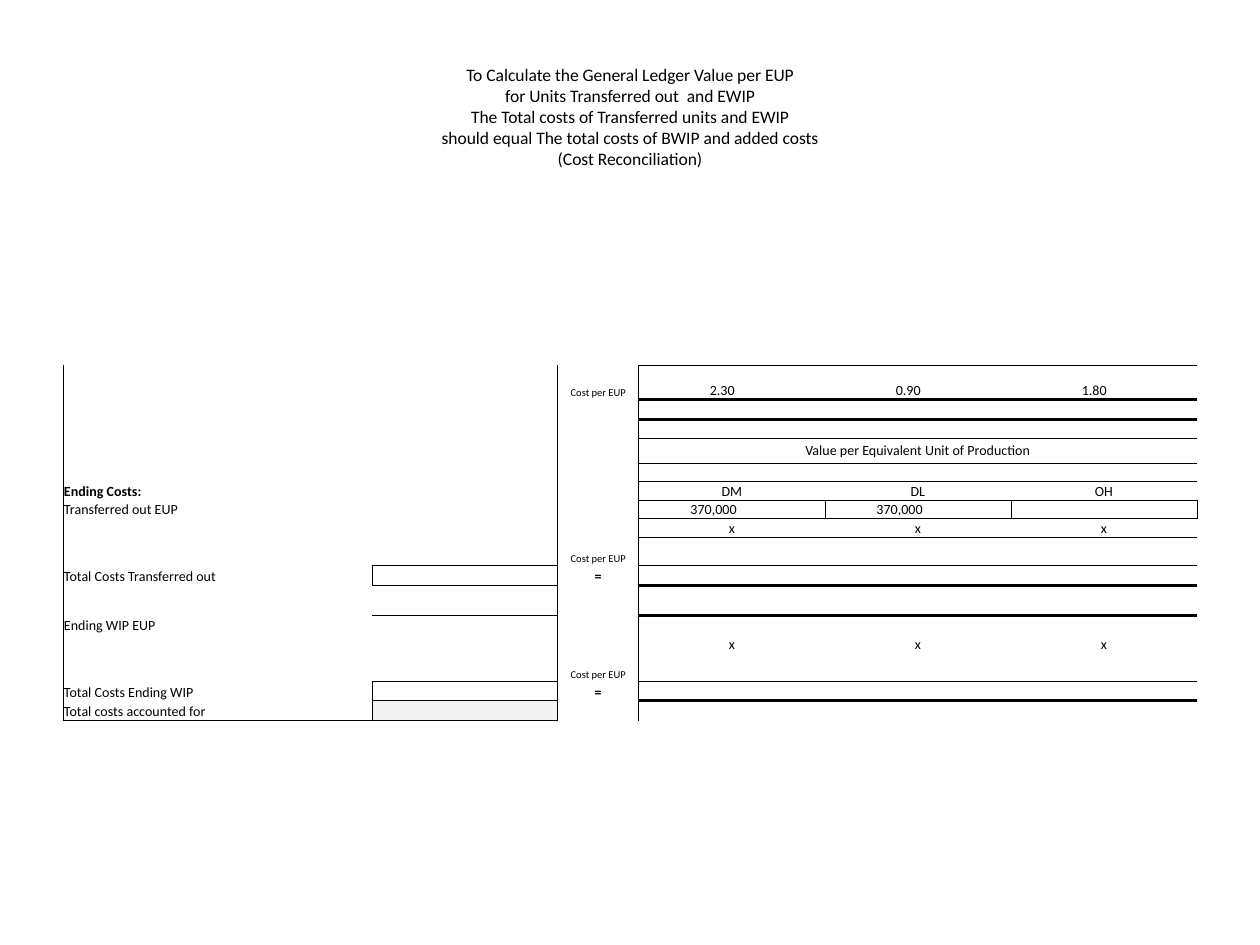
from collections import defaultdict

from lxml import etree
from pptx import Presentation
from pptx import util as u
from pptx.dml.color import RGBColor
from pptx.enum import text
from pptx.oxml import ns

FONT = "Calibri"
BLACK = "000000"
THIN, THICK = 0.5, 2
NO_STYLE = "{2D5ABB26-0587-4C30-8999-92F81FD0307C}"

TITLE = "\v".join([
    "To Calculate the General Ledger Value per EUP",
    "for Units Transferred out  and EWIP",
    "The Total costs of Transferred units and EWIP",
    "should equal The total costs of BWIP and added costs",
    "(Cost Reconciliation)",
])

COLUMN_WIDTHS = [3.98, 2.26, 3.73, 1.64, 3.75, 3.75, 3.75]
ROW_HEIGHTS = [0.69, 0.41, 0.37, 0.51, 0.36, 0.38, 0.37, 0.38,
               0.56, 0.41, 0.61, 0.38, 0.38, 0.56, 0.4, 0.4]
LAST_ROW = len(ROW_HEIGHTS) - 1
LABEL, TOTAL, NOTE = 0, 2, 3
COST_COLUMNS = [4, 5, 6]
RATE_ROW, HEADING_ROW, NAME_ROW, UNITS_ROW = 0, 3, 5, 6
TIMES_ROWS = [7, 12]
RESULT_ROWS = [9, 14]

ROW_LABELS = {
    6: "Transferred out EUP",
    9: "Total Costs Transferred out",
    11: "Ending WIP EUP",
    14: "Total Costs Ending WIP",
    15: "Total costs accounted for",
}
# Side of a cell: (row step, column step, same edge seen from the neighbour)
SIDES = {"L": (0, -1, "R"), "R": (0, 1, "L"), "T": (-1, 0, "B"), "B": (1, 0, "T")}


def colour(value):
    return RGBColor.from_string(value)


def write(frame, content, size=8, bold=False, align=text.PP_ALIGN.LEFT):
    frame.text = content
    para = frame.paragraphs[0]
    para.alignment = align
    for span in para.runs:
        span.font.name = FONT
        span.font.size = u.Pt(size)
        span.font.bold = bold
        span.font.color.rgb = colour(BLACK)


def write_centred(frame, content, **style):
    write(frame, content, align=text.PP_ALIGN.CENTER, **style)


def write_indented(cell, content, indent):
    cell.margin_left = u.Cm(indent)
    write(cell.text_frame, content)


def add_title(page):
    title = page.shapes.title
    title.left, title.top = u.Cm(1.27), u.Cm(0.76)
    title.width, title.height = u.Cm(22.86), u.Cm(3.18)
    title.text_frame.vertical_anchor = text.MSO_ANCHOR.MIDDLE
    write_centred(title.text_frame, TITLE, size=10)


def prepare_cell(cell):
    """Clear the fill, tighten the margins and keep an empty cell low."""
    cell.fill.background()
    cell.margin_left = cell.margin_right = cell.margin_top = u.Cm(0.02)
    cell.margin_bottom = 0
    cell.vertical_anchor = text.MSO_ANCHOR.BOTTOM
    para = cell.text_frame.paragraphs[0]
    etree.SubElement(para._p, ns.qn("a:endParaRPr"), sz="600")


def add_grid(page):
    frame = page.shapes.add_table(
        len(ROW_HEIGHTS), len(COLUMN_WIDTHS),
        u.Cm(1.27), u.Cm(7.36), u.Cm(sum(COLUMN_WIDTHS)), u.Cm(sum(ROW_HEIGHTS)))
    table = frame.table
    table.first_row = table.horz_banding = False
    table._tbl.tblPr.find(ns.qn("a:tableStyleId")).text = NO_STYLE
    for column, width in zip(table.columns, COLUMN_WIDTHS):
        column.width = u.Cm(width)
    for row, height in zip(table.rows, ROW_HEIGHTS):
        row.height = u.Cm(height)
    for cell in table.iter_cells():
        prepare_cell(cell)
    for row in RESULT_ROWS + [LAST_ROW]:
        table.cell(row, LABEL).merge(table.cell(row, LABEL + 1))
    table.cell(HEADING_ROW, COST_COLUMNS[0]).merge(
        table.cell(HEADING_ROW, COST_COLUMNS[-1]))
    return table


def fill_labels(table):
    write(table.cell(NAME_ROW, LABEL).text_frame, "Ending Costs:", bold=True)
    for row, label in ROW_LABELS.items():
        write(table.cell(row, LABEL).text_frame, label)
    for row in [RATE_ROW] + [result - 1 for result in RESULT_ROWS]:
        write_centred(table.cell(row, NOTE).text_frame, "Cost per EUP", size=6)
    for row in RESULT_ROWS:
        write_centred(table.cell(row, NOTE).text_frame, "=", bold=True)
    total = table.cell(LAST_ROW, TOTAL)
    total.fill.solid()
    total.fill.fore_color.rgb = colour("F2F2F2")


def fill_costs(table):
    heading = table.cell(HEADING_ROW, COST_COLUMNS[0])
    heading.vertical_anchor = text.MSO_ANCHOR.MIDDLE
    write_centred(heading.text_frame, "Value per Equivalent Unit of Production")
    costs = [("DM", "2.30", "370,000"), ("DL", "0.90", "370,000"), ("OH", "1.80", "")]
    for column, (name, rate, units) in zip(COST_COLUMNS, costs):
        write_indented(table.cell(RATE_ROW, column), rate, 1.43)
        write_centred(table.cell(NAME_ROW, column).text_frame, name)
        if units:
            write_indented(table.cell(UNITS_ROW, column), units, 1.04)
        for row in TIMES_ROWS:
            write_centred(table.cell(row, column).text_frame, "x")


def plan_borders():
    """Return the line width of each side of each cell, shared edges on both cells."""
    edges = defaultdict(dict)

    def mark(row, column, sides, width=THIN):
        for side in sides:
            down, across, opposite = SIDES[side]
            edges[row, column][side] = width
            edges[row + down, column + across][opposite] = width

    for row in range(LAST_ROW + 1):
        mark(row, LABEL, "L")
        mark(row, TOTAL, "R")
    for column in range(TOTAL + 1):
        mark(LAST_ROW, column, "B")
    for row in RESULT_ROWS + [LAST_ROW]:
        mark(row, TOTAL, "LRTB")
    for column in COST_COLUMNS:
        for row in [RATE_ROW] + RESULT_ROWS:
            mark(row, column, "T")
            mark(row, column, "B", THICK)
        mark(HEADING_ROW, column, "TB")
        mark(UNITS_ROW, column, "LRTB")
    mark(HEADING_ROW, COST_COLUMNS[0], "L")
    mark(HEADING_ROW, COST_COLUMNS[-1], "R")
    return edges


def draw_borders(table):
    edges = plan_borders()
    for row in range(len(ROW_HEIGHTS)):
        for column in range(len(COLUMN_WIDTHS)):
            properties = table.cell(row, column)._tc.get_or_add_tcPr()
            sides = [side for side in SIDES if side in edges[row, column]]
            for position, side in enumerate(sides):
                line = etree.Element(
                    ns.qn("a:ln" + side), w=str(u.Pt(edges[row, column][side])))
                solid = etree.SubElement(line, ns.qn("a:solidFill"))
                etree.SubElement(solid, ns.qn("a:srgbClr"), val=BLACK)
                properties.insert(position, line)


def main():
    deck = Presentation()
    deck.slide_width, deck.slide_height = u.Cm(25.4), u.Cm(19.05)
    page = deck.slides.add_slide(deck.slide_layouts[5])
    add_title(page)
    table = add_grid(page)
    fill_labels(table)
    fill_costs(table)
    draw_borders(table)
    deck.save("out.pptx")


if __name__ == "__main__":
    main()
